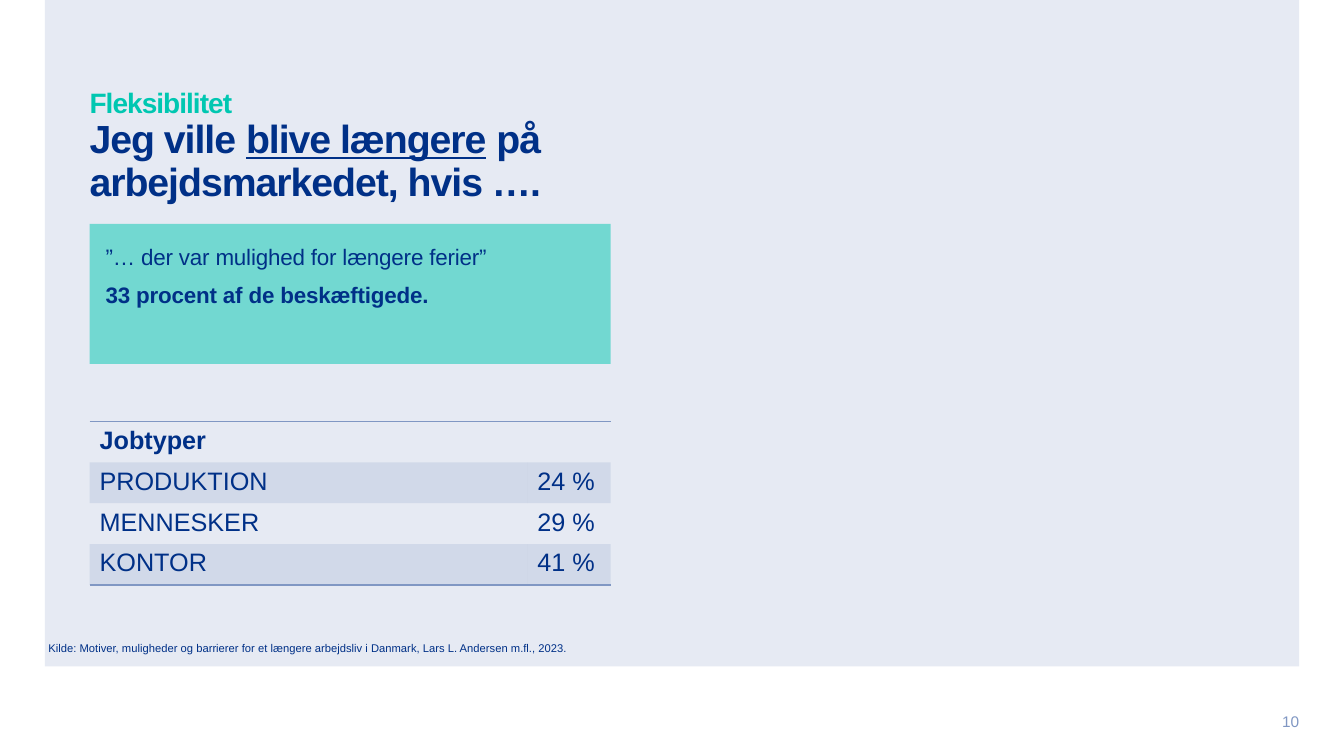
from lxml import etree
from pptx import Presentation
from pptx import util as u
from pptx.dml.color import RGBColor
from pptx.enum import shapes, text
from pptx.oxml.ns import qn

NAVY, TEAL, MUTED, PALE = "003087", "00C7B1", "8097C3", "E6EAF3"
COLUMNS, ROWS = 30, 27


def rgb(value):
    return RGBColor.from_string(value)


def paint(fill, color, owner, opacity=100):
    """Fill solidly; owner is the XML element that holds the fill."""
    fill.solid()
    fill.fore_color.rgb = rgb(color)
    if opacity < 100:
        tone = owner.find(qn("a:solidFill"))[0]
        etree.SubElement(tone, qn("a:alpha")).set("val", str(opacity * 1000))


class SlideBuilder:
    def __init__(self, deck, font="Arial"):
        self.font = font
        self.width, self.height = deck.slide_width, deck.slide_height
        self.slide = deck.slides.add_slide(deck.slide_layouts[6])

    def area(self, column, row, columns, rows):
        """Turn grid columns and rows into slide lengths."""
        across, down = self.width / COLUMNS, self.height / ROWS
        return [int(n) for n in (column * across, row * down,
                                 columns * across, rows * down)]

    def add_words(self, paragraph, words, size, color=NAVY, bold=False,
                  underline=False, tracking=0):
        piece = paragraph.add_run()
        piece.text = words
        font = piece.font
        font.name, font.size, font.bold = self.font, u.Pt(size), bold
        font.underline = underline
        font.color.rgb = rgb(color)
        if tracking:
            font._element.set("spc", str(round(tracking * 100)))

    def fill_frame(self, frame, paragraphs, inset=0,
                   anchor=text.MSO_ANCHOR.TOP, align=text.PP_ALIGN.LEFT,
                   spacing=1.0, after=0):
        """Each paragraph is a list of lines, each line a list of runs."""
        frame.word_wrap = True
        frame.vertical_anchor = anchor
        frame.margin_left = frame.margin_right = u.Inches(inset)
        frame.margin_top = frame.margin_bottom = u.Inches(inset)
        for i, lines in enumerate(paragraphs):
            paragraph = frame.add_paragraph() if i else frame.paragraphs[0]
            paragraph.alignment = align
            paragraph.line_spacing = spacing
            paragraph.space_after = u.Pt(after)
            for j, line in enumerate(lines):
                if j:
                    paragraph.add_line_break()
                for words, style in line:
                    self.add_words(paragraph, words, **style)

    def label(self, place, paragraphs, **layout):
        box = self.slide.shapes.add_textbox(*self.area(*place))
        self.fill_frame(box.text_frame, paragraphs, **layout)

    def panel(self, place, color, opacity=100):
        block = self.slide.shapes.add_shape(
            shapes.MSO_SHAPE.RECTANGLE, *self.area(*place))
        block.shadow.inherit = False
        block.line.fill.background()
        paint(block.fill, color, block._element.spPr, opacity)
        return block

    def borders(self, cell, ruled):
        """Rule the named sides of a cell and clear the others."""
        properties = cell._tc.get_or_add_tcPr()
        for position, side in enumerate("LRTB"):
            line = etree.Element(qn(f"a:ln{side}"), w=str(u.Pt(1)))
            if side in ruled:
                solid = etree.SubElement(line, qn("a:solidFill"))
                etree.SubElement(solid, qn("a:srgbClr"), val=MUTED)
            else:
                etree.SubElement(line, qn("a:noFill"))
            properties.insert(position, line)

    def table(self, place, records, shares, size):
        left, top, width, height = self.area(*place)
        grid = self.slide.shapes.add_table(
            len(records), len(shares), left, top, width, height).table
        grid.first_row = grid.horz_banding = False
        for column, share in zip(grid.columns, shares):
            column.width = int(width * share)
        for i, record in enumerate(records):
            ruled = "TB" if i == 0 else "B" if i == len(records) - 1 else ""
            for j, words in enumerate(record):
                cell = grid.cell(i, j)
                if i % 2:
                    paint(cell.fill, MUTED, cell._tc.tcPr, 20)
                else:
                    cell.fill.background()
                self.borders(cell, ruled)
                if words:
                    self.add_words(cell.text_frame.paragraphs[0], words, size,
                                   bold=i == 0)


def main():
    deck = Presentation()
    deck.slide_width, deck.slide_height = u.Inches(13.33), u.Inches(7.5)
    page = SlideBuilder(deck)

    page.panel((1, 0, 28, 23.8), PALE)
    page.label((28, 25.5, 1, 0.5), [[[("10", dict(size=11, color=MUTED))]]],
               anchor=text.MSO_ANCHOR.MIDDLE, align=text.PP_ALIGN.RIGHT)

    topic = dict(size=20, color=TEAL, bold=True, tracking=-0.7)
    heading = dict(size=28, bold=True, tracking=-0.7)
    page.label((2, 3.2, 26, 1.6), [[
        [("Fleksibilitet", topic)],
        [("Jeg ville ", heading),
         ("blive længere", dict(heading, underline=True)),
         (" på ", heading)],
        [("arbejdsmarkedet, hvis ….", heading)],
    ]], spacing=0.9)

    quote = dict(size=16, tracking=-0.1)
    finding = page.panel((2, 8, 11.63, 5), TEAL, 50)
    page.fill_frame(finding.text_frame, [
        [[("”… der var mulighed for længere ferier”", quote)]],
        [[("33 procent af de beskæftigede.", dict(quote, bold=True))]],
    ], inset=0.16, spacing=1.1, after=6)

    job_types = [("Jobtyper", ""), ("PRODUKTION", "24 %"),
                 ("MENNESKER", "29 %"), ("KONTOR", "41 %")]
    page.table((2, 15.05, 11.63, 5.84), job_types, (0.84, 0.16), 18)

    page.label((1.08, 22.9, 12.92, 0.75), [[[(
        "Kilde: Motiver, muligheder og barrierer for et længere arbejdsliv "
        "i Danmark, Lars L. Andersen m.fl., 2023.", dict(size=8))]]],
        spacing=1.04, after=3)

    deck.save("out.pptx")


if __name__ == "__main__":
    main()
